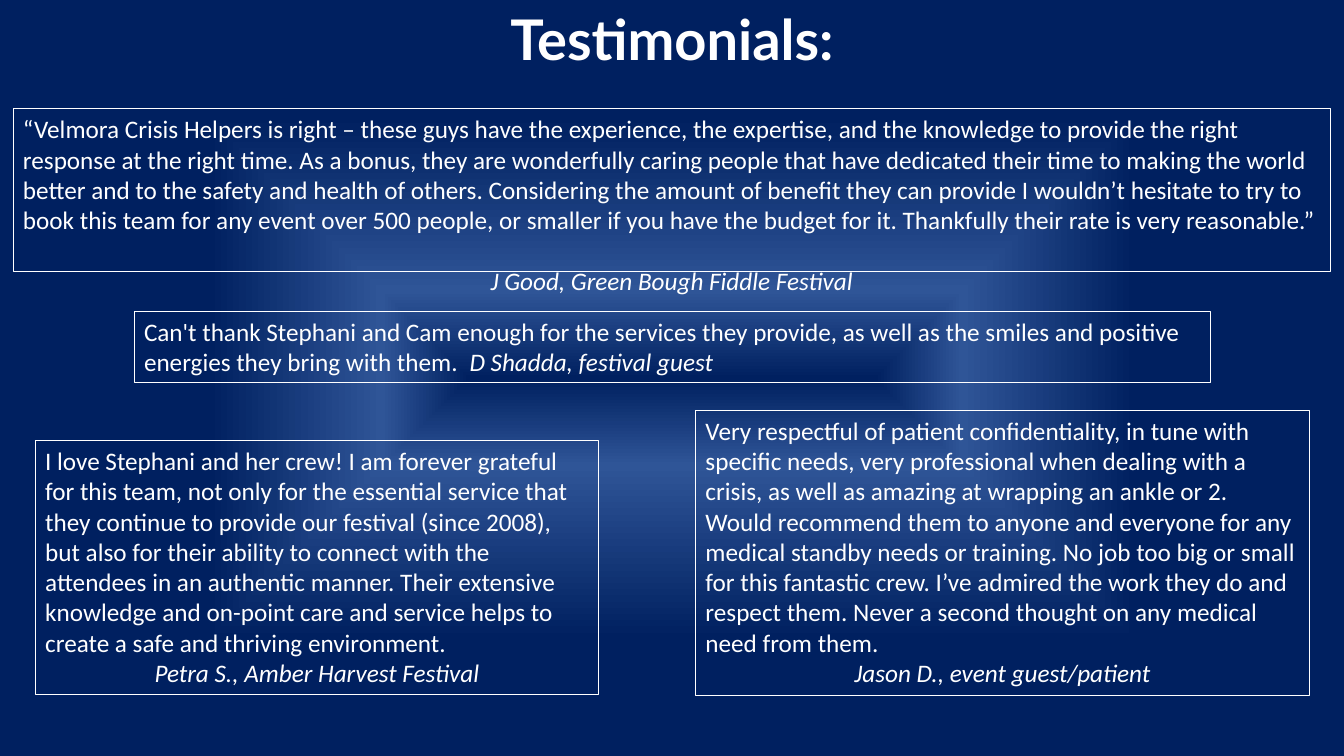
"""Build the testimonials slide."""
from pptx import Presentation
from pptx.dml.color import RGBColor
from pptx.enum.shapes import MSO_SHAPE
from pptx.enum.text import MSO_ANCHOR, PP_ALIGN
from pptx.oxml import parse_xml
from pptx.oxml.ns import nsdecls
from pptx.util import Cm, Pt

RECTANGLE = MSO_SHAPE.RECTANGLE
TOP = MSO_ANCHOR.TOP
LEFT, CENTER = PP_ALIGN.LEFT, PP_ALIGN.CENTER

TITLE = "Testimonials:"
TITLE_BOX = (2.01, 0, 29.85, 1.96)
TESTIMONIALS = [
    {"box": (0.33, 2.74, 33.2, 4.11), "inline": False, "gap": 21.6,
     "quote": "“Velmora Crisis Helpers is right – these guys have the experience, the expertise, "
              "and the knowledge to provide the right response at the right time. As a bonus, they are "
              "wonderfully caring people that have dedicated their time to making the world better and "
              "to the safety and health of others. Considering the amount of benefit they can provide "
              "I wouldn’t hesitate to try to book this team for any event over 500 people, or smaller "
              "if you have the budget for it. Thankfully their rate is very reasonable.”",
     "author": "J Good, Green Bough Fiddle Festival"},
    {"box": (3.38, 7.85, 27.13, 1.8), "inline": True, "gap": 0,
     "quote": "Can't thank Stephani and Cam enough for the services they provide, as well as the "
              "smiles and positive energies they bring with them.  ",
     "author": "D Shadda, festival guest"},
    {"box": (0.89, 11.1, 14.2, 6.4), "inline": False, "gap": 0,
     "quote": "I love Stephani and her crew! I am forever grateful for this team, not only for the "
              "essential service that they continue to provide our festival (since 2008), but also for "
              "their ability to connect with the attendees in an authentic manner. Their extensive "
              "knowledge and on-point care and service helps to create a safe and thriving environment.",
     "author": "Petra S., Amber Harvest Festival"},
    {"box": (17.53, 10.34, 15.47, 7.19), "inline": False, "gap": 0,
     "quote": "Very respectful of patient confidentiality, in tune with specific needs, very "
              "professional when dealing with a crisis, as well as amazing at wrapping an ankle or 2. "
              "Would recommend them to anyone and everyone for any medical standby needs or training. "
              "No job too big or small for this fantastic crew. I’ve admired the work they do and "
              "respect them. Never a second thought on any medical need from them.",
     "author": "Jason D., event guest/patient"},
]
THEME = {
    "ink": RGBColor(0xFF, 0xFF, 0xFF),
    "glow": [(0, "002060"), (23, "2F5597"), (69, "002060"), (97, "002060")],
    "title": ("Lato", Pt(40)),
    "body": ("Calibri", Pt(18)),
    "line": Pt(0.75),
}


def paint_background(s):
    stops = "".join(f'<a:gs pos="{pos * 1000}"><a:srgbClr val="{color}"/></a:gs>'
                    for pos, color in THEME["glow"])
    bg = parse_xml(
        f'<p:bg {nsdecls("p", "a")}><p:bgPr><a:gradFill rotWithShape="1"><a:gsLst>{stops}</a:gsLst>'
        '<a:path path="shape"><a:fillToRect l="50000" t="50000" r="50000" b="50000"/></a:path>'
        '</a:gradFill><a:effectLst/></p:bgPr></p:bg>')
    s.element.cSld.insert(0, bg)


def add_run(p, text, style, bold=False, italic=False):
    r = p.add_run()
    r.text = text
    r.font.name, r.font.size = THEME[style]
    r.font.color.rgb = THEME["ink"]
    r.font.bold, r.font.italic = bold, italic


def add_title(s):
    tf = s.shapes.add_textbox(*map(Cm, TITLE_BOX)).text_frame
    tf.word_wrap = True
    p = tf.paragraphs[0]
    p.alignment = CENTER
    add_run(p, TITLE, "title", bold=True)


def add_testimonial(s, item):
    sp = s.shapes.add_shape(RECTANGLE, *map(Cm, item["box"]))
    sp.shadow.inherit = False
    sp.fill.background()
    sp.line.color.rgb = THEME["ink"]
    sp.line.width = THEME["line"]
    tf = sp.text_frame
    tf.word_wrap = True
    tf.vertical_anchor = TOP
    p = tf.paragraphs[0]
    p.alignment = LEFT
    add_run(p, item["quote"], "body")
    if not item["inline"]:
        p = tf.add_paragraph()
        p.alignment = CENTER
        p.space_before = Pt(item["gap"])
    add_run(p, item["author"], "body", italic=True)


def main():
    prs = Presentation()
    prs.slide_width, prs.slide_height = Cm(33.87), Cm(19.05)
    s = prs.slides.add_slide(prs.slide_layouts[6])
    paint_background(s)
    add_title(s)
    for item in TESTIMONIALS:
        add_testimonial(s, item)
    prs.save("out.pptx")


if __name__ == "__main__":
    main()
